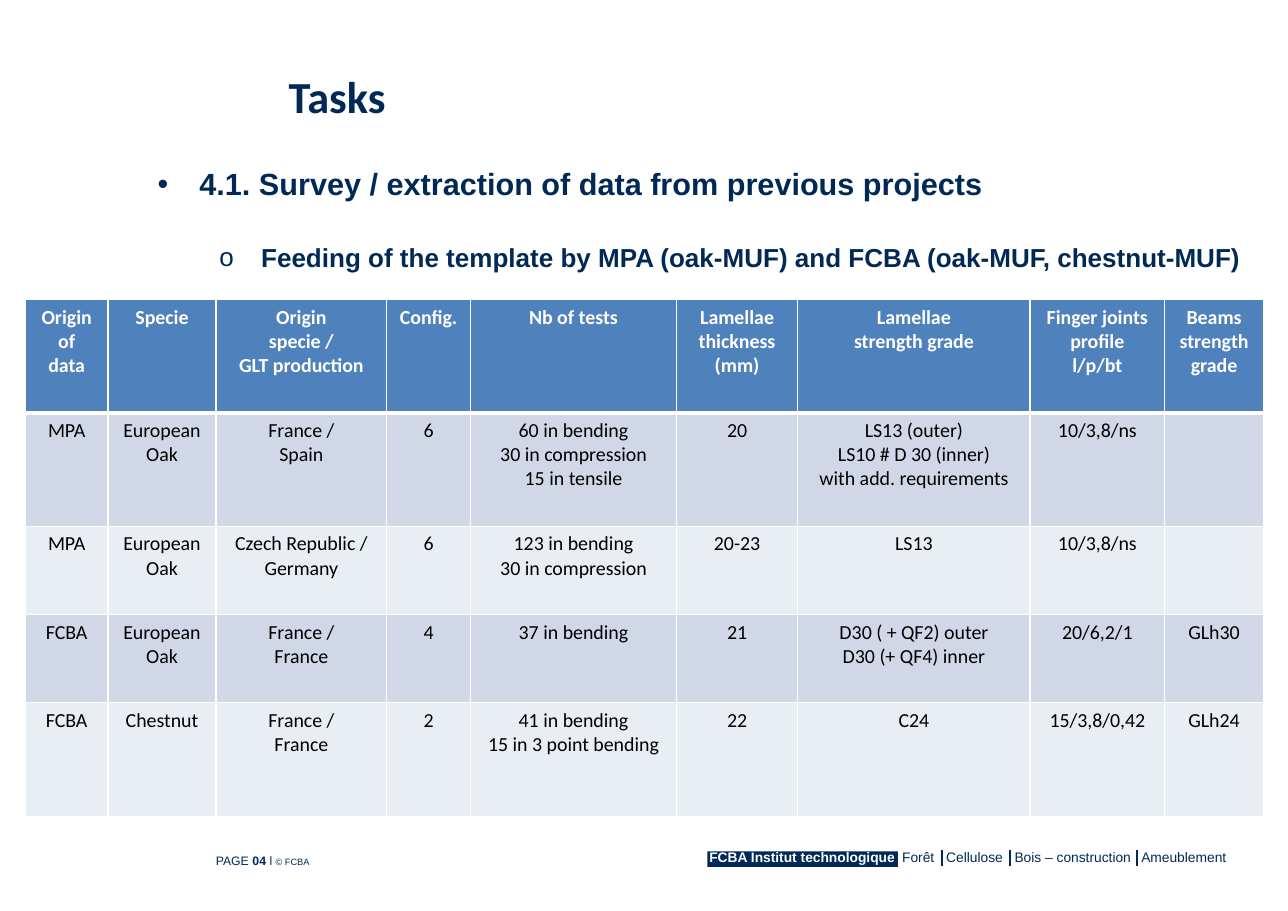
"""Build the Tasks slide with its survey table and footer."""
from dataclasses import dataclass

from lxml import etree
from pptx import Presentation
from pptx.dml.color import RGBColor
from pptx.enum import shapes, text
from pptx.oxml import ns
from pptx.util import Inches, Pt

TITLE = "Tasks"
POINTS = [
    (0, "•", 0.38, "4.1. Survey / extraction of data from previous projects"),
    (1, "o", 0.94, "Feeding of the template by MPA (oak-MUF) and FCBA (oak-MUF, chestnut-MUF)"),
]
ROWS = [
    ["Origin of\ndata", "Specie", "Origin\nspecie /\nGLT production", "Config.", "Nb of tests",
     "Lamellae thickness\n(mm)", "Lamellae\nstrength grade", "Finger joints profile\nl/p/bt",
     "Beams\nstrength grade"],
    ["MPA", "European Oak", "France /\nSpain", "6",
     "60 in bending\n30 in compression\n15 in tensile", "20",
     "LS13 (outer)\nLS10 # D 30 (inner)\nwith add. requirements", "10/3,8/ns", ""],
    ["MPA", "European Oak", "Czech Republic /\nGermany", "6",
     "123 in bending\n30 in compression", "20-23", "LS13", "10/3,8/ns", ""],
    ["FCBA", "European Oak", "France /\nFrance", "4", "37 in bending", "21",
     "D30 ( + QF2) outer\nD30 (+ QF4) inner", "20/6,2/1", "GLh30"],
    ["FCBA", "Chestnut", "France /\nFrance", "2",
     "41 in bending\n15 in 3 point bending", "22", "C24", "15/3,8/0,42", "GLh24"],
]
WIDTHS = [0.75, 0.98, 1.55, 0.76, 1.87, 1.1, 2.11, 1.22, 0.9]
HEIGHTS = [1.03, 1.03, 0.8, 0.8, 1.03]
OWNER = "FCBA Institut technologique"
FIELDS = [("Forêt", 1.75), ("Cellulose", 2.15), ("Bois – construction", 2.77),
          ("Ameublement", 3.92)]


@dataclass
class Theme:
    """Colours, fonts and type sizes."""
    navy: str = "002956"
    white: str = "FFFFFF"
    black: str = "000000"
    head: str = "4F81BD"
    bands: tuple = ("E9EDF4", "D0D8E8")
    sans: str = "Arial"
    face: str = "Calibri"
    title: int = 29
    points: tuple = (20, 17)
    cell: int = 13
    foot: int = 9
    page: int = 8
    small: int = 6


T = Theme()


def put(para, words, size, color, bold=False, face=T.sans):
    """Add one formatted run."""
    run = para.add_run()
    run.text = words
    font = run.font
    font.name, font.size, font.bold = face, Pt(size), bold
    font.color.rgb = RGBColor.from_string(color)


def sub(parent, tag, **attrs):
    """Append one drawing element."""
    return etree.SubElement(parent, ns.qn(tag), {k: str(v) for k, v in attrs.items()})


def place(shape, left, top, width, height):
    """Set the place of a shape."""
    shape.left, shape.top = Inches(left), Inches(top)
    shape.width, shape.height = Inches(width), Inches(height)


def frame(shape, wrap=True):
    """Set up a text frame at the top of its box."""
    body = shape.text_frame
    body.word_wrap = wrap
    body.auto_size = text.MSO_AUTO_SIZE.NONE
    body.vertical_anchor = text.MSO_ANCHOR.TOP
    return body


def note(slide, left, top, width, height):
    """Add a text box and return its first paragraph."""
    box = slide.shapes.add_textbox(*map(Inches, (left, top, width, height)))
    return frame(box).paragraphs[0]


def heads(slide):
    """Fill the title and the list."""
    name, body = slide.shapes.title, slide.placeholders[1]
    place(name, 2.52, 0.58, 1.09, 0.59)
    para = frame(name, False).paragraphs[0]
    para.alignment = text.PP_ALIGN.LEFT
    put(para, TITLE, T.title, T.navy, True, T.face)
    place(body, 1.33, 1.45, 10.36, 1.2)
    box = frame(body)
    for level, mark, indent, words in POINTS:
        para = box.add_paragraph() if level else box.paragraphs[0]
        para.level = level
        para.space_before = Pt(26 * level)
        props = para._p.get_or_add_pPr()
        props.set("marL", str(Inches(indent)))
        props.set("indent", str(-Inches(0.38)))
        sub(props, "a:buFont", typeface=T.sans)
        sub(props, "a:buChar", char=mark)
        put(para, words, T.points[level], T.navy, True)


def edges(cell, row):
    """Draw white borders, thick under the header."""
    props = cell._tc.get_or_add_tcPr()
    thick = {"T": row == 1, "B": row == 0}
    for side in "LRTB":
        line = sub(props, f"a:ln{side}", w=Pt(3 if thick.get(side) else 1))
        sub(sub(line, "a:solidFill"), "a:srgbClr", val=T.white)


def grid(slide):
    """Add the survey table."""
    table = slide.shapes.add_table(
        len(ROWS), len(WIDTHS), Inches(0.23), Inches(2.72),
        Inches(sum(WIDTHS)), Inches(sum(HEIGHTS))).table
    for col, width in zip(table.columns, WIDTHS):
        col.width = Inches(width)
    for r, (row, height) in enumerate(zip(ROWS, HEIGHTS)):
        table.rows[r].height = Inches(height)
        for c, words in enumerate(row):
            cell = table.cell(r, c)
            edges(cell, r)
            cell.fill.solid()
            cell.fill.fore_color.rgb = RGBColor.from_string(T.bands[r % 2] if r else T.head)
            for i, line in enumerate(words.split("\n") if words else []):
                body = cell.text_frame
                para = body.add_paragraph() if i else body.paragraphs[0]
                para.alignment = text.PP_ALIGN.CENTER
                put(para, line, T.cell, T.black if r else T.white, not r, T.face)


def foot(slide):
    """Add the footer band, its fields and the page mark."""
    left, top = 6.34, 7.72
    navy = RGBColor.from_string(T.navy)
    band = slide.shapes.add_shape(
        shapes.MSO_SHAPE.RECTANGLE, *map(Inches, (6.42, 7.73, 1.73, 0.14)))
    band.shadow.inherit = False
    band.fill.solid()
    band.fill.fore_color.rgb = navy
    band.line.fill.background()
    para = note(slide, left, 7.66, 5.3, 0.25)
    tabs = sub(para._p.get_or_add_pPr(), "a:tabLst")
    put(para, OWNER, T.foot, T.white, True)
    for i, (words, stop) in enumerate(FIELDS):
        sub(tabs, "a:tab", pos=Inches(stop), algn="l")
        put(para, "\t" + words, T.foot, T.navy)
        if i:
            x = Inches(left + 0.06 + stop)
            bar = slide.shapes.add_connector(
                shapes.MSO_CONNECTOR.STRAIGHT, x, Inches(top), x, Inches(top + 0.14))
            bar.line.color.rgb = navy
            bar.line.width = Pt(1.4)
            sub(bar._element.spPr, "a:effectLst")
    para = note(slide, 1.86, 7.7, 2.52, 0.23)
    put(para, "PAGE ", T.page, T.navy)
    put(para, "04 ", T.page, T.navy, True)
    put(para, "l ", T.page, T.navy)
    put(para, "© FCBA", T.small, T.navy)


def main():
    """Build and save the slide."""
    deck = Presentation()
    deck.slide_width, deck.slide_height = Inches(11.69), Inches(8.27)
    slide = deck.slides.add_slide(deck.slide_layouts[1])
    foot(slide)
    heads(slide)
    grid(slide)
    deck.save("out.pptx")


if __name__ == "__main__":
    main()
